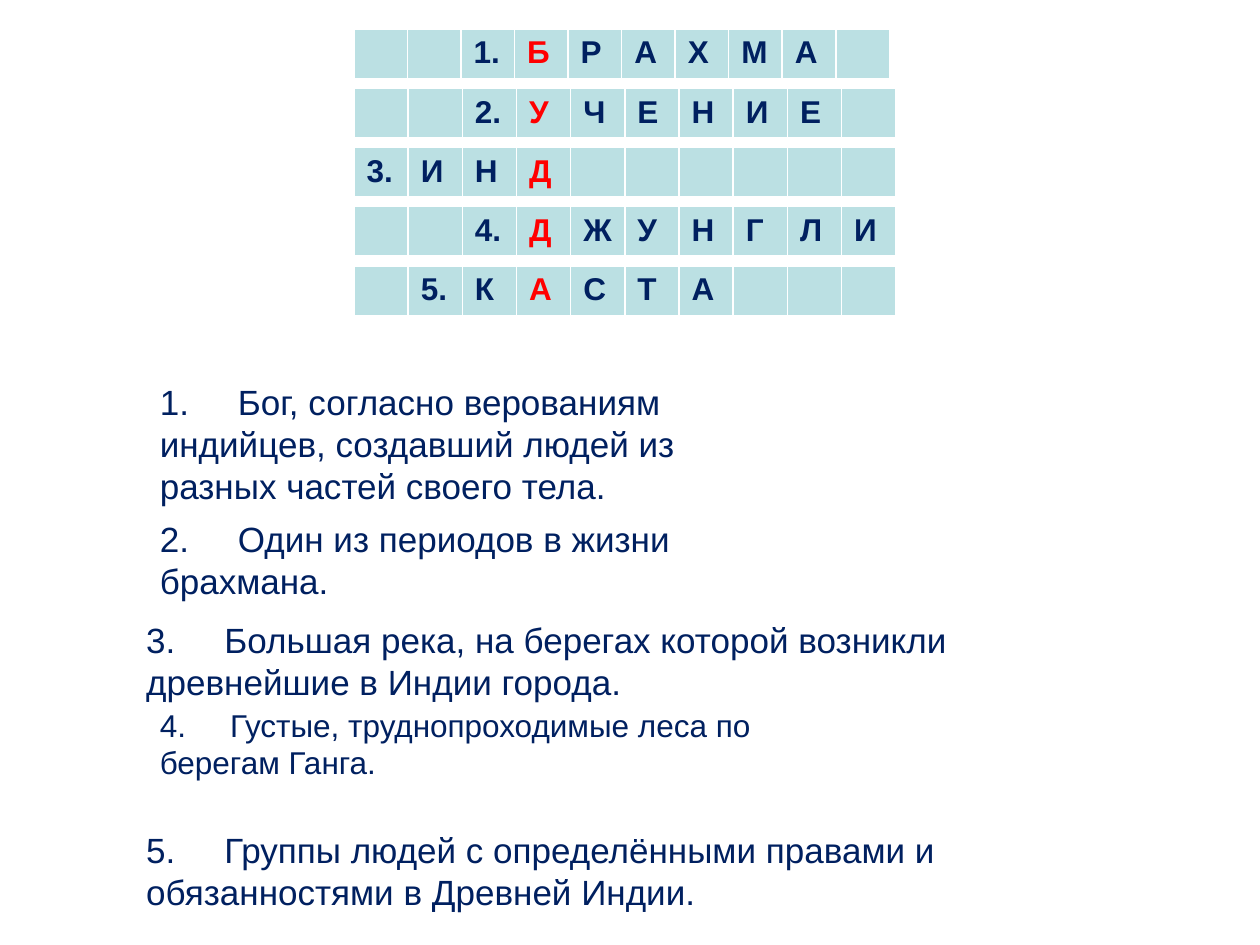
"""Build a crossword slide with five answer strips and their clues."""
from lxml import etree
from pptx import Presentation
from pptx.dml.color import RGBColor
from pptx.oxml.ns import qn
from pptx.util import Inches, Pt

NAVY = RGBColor(0x00, 0x20, 0x60)
RED = RGBColor(0xFF, 0x00, 0x00)
TEAL = RGBColor(0xBB, 0xE0, 0xE3)
WHITE = RGBColor(0xFF, 0xFF, 0xFF)
FONT = "Arial"
COLS = 10
KEY = 3
LEFT, TOP, STEP, HIGH = 2.81, 0.23, 0.47, 0.4
EDGES = (("a:lnL", 1), ("a:lnR", 1), ("a:lnT", 1), ("a:lnB", 3))

WORDS = [
    (2, "БРАХМА", 0.425),
    (2, "УЧЕНИЕ", 0.43),
    (0, "ИНД", 0.43),
    (2, "ДЖУНГЛИ", 0.43),
    (1, "КАСТА", 0.43),
]
CLUES = [
    (1.17, 2.97, 4.59, 1.11, 0.1, 20,
     "Бог, согласно верованиям индийцев, создавший людей из разных частей своего тела."),
    (1.17, 4.06, 4.3, 0.77, 0.1, 20, "Один из периодов в жизни брахмана."),
    (0.47, 4.86, 7.19, 0.77, 0.69, 20,
     "Большая река, на берегах которой возникли древнейшие в Индии города."),
    (1.17, 5.55, 5, 0.71, 0.1, 18, "Густые, труднопроходимые леса по берегам Ганга."),
    (0.47, 6.53, 8.5, 0.77, 0.69, 20,
     "Группы людей с определёнными правами и обязанностями в Древней Индии."),
]


def write(para, text, size, color, bold):
    run = para.add_run()
    run.text = text
    font = run.font
    font.name, font.size, font.bold = FONT, Pt(size), bold
    font.color.rgb = color


def edge(cell):
    props = cell._tc.get_or_add_tcPr()
    for spot, (tag, width) in enumerate(EDGES):
        line = etree.Element(qn(tag), w=str(Pt(width)))
        fill = etree.SubElement(line, qn("a:solidFill"))
        etree.SubElement(fill, qn("a:srgbClr"), val=str(WHITE))
        props.insert(spot, line)


deck = Presentation()
deck.slide_width, deck.slide_height = Inches(10), Inches(7.5)
slide = deck.slides.add_slide(deck.slide_layouts[6])

for row, (start, word, wide) in enumerate(WORDS):
    frame = slide.shapes.add_table(
        1, COLS, Inches(LEFT), Inches(TOP + row * STEP),
        Inches(wide * COLS), Inches(HIGH))
    table = frame.table
    table.first_row = table.horz_banding = False
    marks = [""] * start + [f"{row + 1}."] + list(word)
    marks += [""] * (COLS - len(marks))
    for col, mark in enumerate(marks):
        table.columns[col].width = Inches(wide)
        cell = table.cell(0, col)
        cell.fill.solid()
        cell.fill.fore_color.rgb = TEAL
        edge(cell)
        if mark:
            color = RED if col == KEY else NAVY
            write(cell.text_frame.paragraphs[0], mark, 18, color, True)

for num, (left, top, wide, high, inset, size, clue) in enumerate(CLUES, 1):
    box = slide.shapes.add_textbox(
        Inches(left), Inches(top), Inches(wide), Inches(high))
    body = box.text_frame
    body.word_wrap = True
    body.margin_left = Inches(inset)
    para = body.paragraphs[0]
    tabs = etree.SubElement(para._p.get_or_add_pPr(), qn("a:tabLst"))
    stop = Inches(0.031 * size)
    etree.SubElement(tabs, qn("a:tab"), pos=str(stop), algn="l")
    write(para, f"{num}.\t{clue}", size, NAVY, False)

deck.save("out.pptx")
